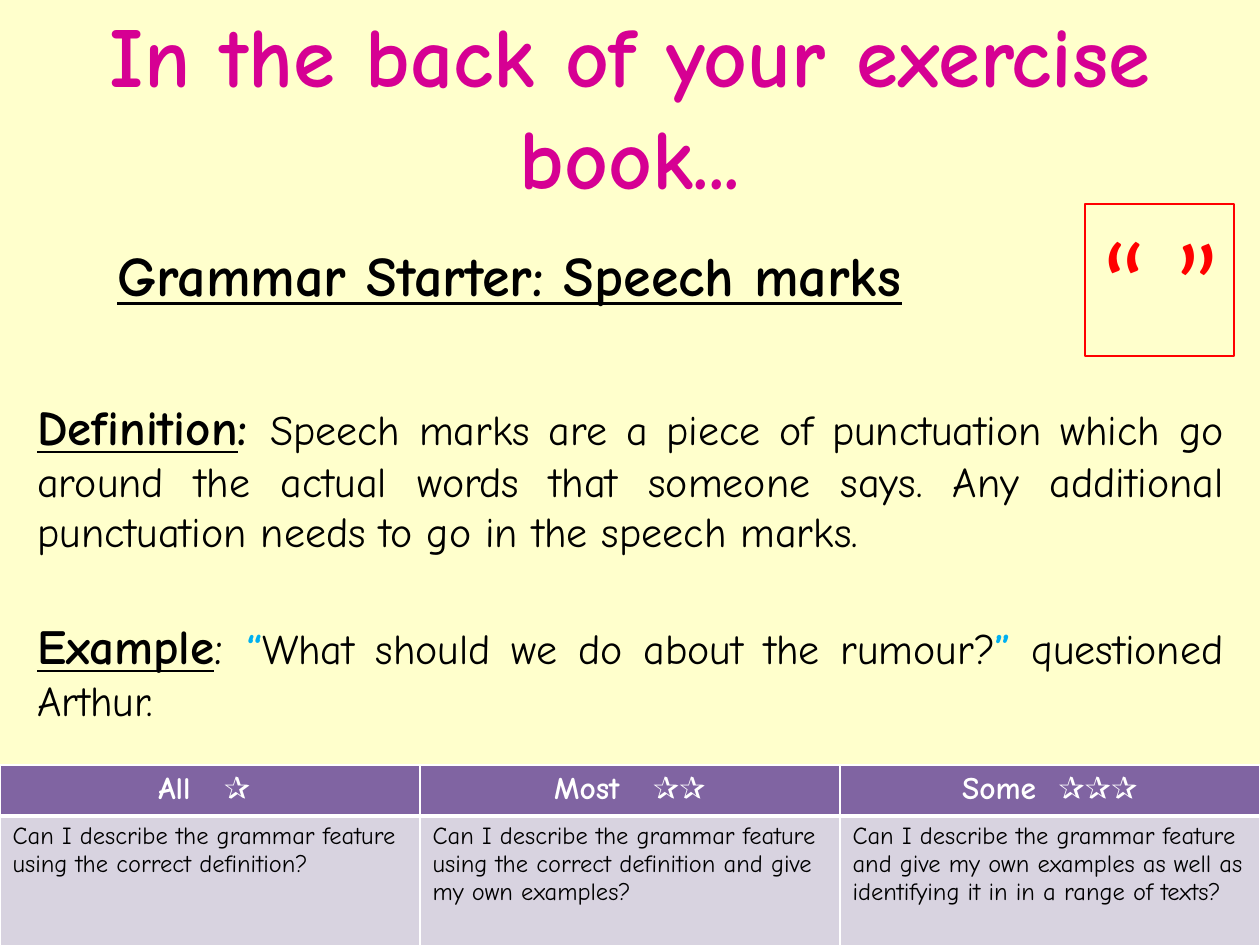
from lxml.etree import SubElement
from pptx import Presentation
from pptx.dml.color import RGBColor
from pptx.enum.shapes import MSO_SHAPE
from pptx.enum.text import MSO_ANCHOR, PP_ALIGN
from pptx.oxml.ns import qn
from pptx.util import Pt

EMU_PER_PX = 914400 / 126
FONT = "Comic Neue"
COLORS = {
    "paper": "FFFFCC", "title": "D60093", "ink": "000000", "quote": "00B0F0",
    "mark": "FF0000", "header": "8064A2", "cell": "D8D3E0", "white": "FFFFFF",
}


def px(n):
    return round(n * EMU_PER_PX)


def rgb(name):
    return RGBColor.from_string(COLORS[name])


class SlideBuilder:
    def __init__(self, prs):
        self.s = prs.slides.add_slide(prs.slide_layouts[6])
        fill = self.s.background.fill
        fill.solid()
        fill.fore_color.rgb = rgb("paper")

    def style(self, font, size, color="ink", bold=False, underline=None, name=FONT):
        font.name, font.size, font.bold = name, Pt(size), bold
        font.underline = underline
        font.color.rgb = rgb(color)

    def text_box(self, x, y, w, h, anchor=MSO_ANCHOR.TOP):
        tf = self.s.shapes.add_textbox(px(x), px(y), px(w), px(h)).text_frame
        tf.word_wrap = True
        tf.vertical_anchor = anchor
        return tf

    def paragraph(self, p, text, align=PP_ALIGN.LEFT, before=0, indent=0, **style):
        p.text = text
        p.alignment = align
        p.space_before = Pt(before)
        if indent:
            p._p.get_or_add_pPr().set("marL", str(px(indent)))
        self.style(p.font, **style)

    def rich_paragraph(self, p, runs, before):
        """Fill a justified paragraph from (text, style) pairs."""
        p.alignment = PP_ALIGN.JUSTIFY
        p.space_before = Pt(before)
        for text, style in runs:
            r = p.add_run()
            r.text = text
            self.style(r.font, **style)

    def framed_text(self, x, y, w, h, text, color, size, name):
        sp = self.s.shapes.add_shape(MSO_SHAPE.RECTANGLE, px(x), px(y), px(w), px(h))
        sp.shadow.inherit = False
        sp.fill.background()
        sp.line.color.rgb = rgb(color)
        sp.line.width = Pt(1)
        tf = sp.text_frame
        tf.word_wrap = True
        tf.margin_left = tf.margin_right = 0
        tf.vertical_anchor = MSO_ANCHOR.TOP
        self.paragraph(tf.paragraphs[0], text, PP_ALIGN.CENTER,
                       size=size, color=color, name=name)

    def border(self, cell, **widths):
        """Draw white cell borders, widths in points by side (L, R, T, B)."""
        tc_pr = cell._tc.get_or_add_tcPr()
        for side, width in widths.items():
            ln = SubElement(tc_pr, qn(f"a:ln{side}"), w=str(Pt(width)))
            fill = SubElement(ln, qn("a:solidFill"))
            SubElement(fill, qn("a:srgbClr"), val=COLORS["white"])

    def fill_cell(self, cell, color, top, bottom):
        self.border(cell, L=1, R=1, T=top, B=bottom)
        cell.fill.solid()
        cell.fill.fore_color.rgb = rgb(color)

    def level_header(self, p, level, stars, gap):
        """Write a level name and its stars, with the space between widened by gap points."""
        p.alignment = PP_ALIGN.CENTER
        for text in (level, " ", stars):
            r = p.add_run()
            r.text = text
            self.style(r.font, 18, "white", bold=True)
            if text == " ":
                r.font._element.set("spc", str(round(gap * 100)))

    def levels_table(self, x, y, w, row_heights, levels):
        table = self.s.shapes.add_table(2, len(levels), px(x), px(y), px(w),
                                        px(sum(row_heights))).table
        table.horz_banding = False
        for row, height in zip(table.rows, row_heights):
            row.height = px(height)
        for i, (level, stars, gap, question) in enumerate(levels):
            table.columns[i].width = px(w // len(levels))
            head, body = table.cell(0, i), table.cell(1, i)
            self.fill_cell(head, "header", top=1, bottom=3)
            self.fill_cell(body, "cell", top=3, bottom=1)
            self.level_header(head.text_frame.paragraphs[0], level, stars, gap)
            self.paragraph(body.text_frame.paragraphs[0], question, size=14)


def main():
    prs = Presentation()
    prs.slide_width, prs.slide_height = px(1260), px(945)
    slide = SlideBuilder(prs)

    title = slide.text_box(0, 3, 1260, 203, MSO_ANCHOR.MIDDLE)
    slide.paragraph(title.paragraphs[0], "In the back of your exercise book...",
                    PP_ALIGN.CENTER, size=48.6, color="title", bold=True)

    label = dict(size=28, bold=True, underline=True)
    plain = dict(size=24)
    quote = dict(size=24, color="quote", bold=True)
    body = slide.text_box(25, 234, 1211, 610)
    slide.paragraph(body.paragraphs[0], "Grammar Starter: Speech marks",
                    indent=80, size=32, bold=True, underline=True)
    slide.rich_paragraph(body.add_paragraph(), [
        ("Definition", label),
        (": ", dict(size=28, bold=True)),
        ("Speech marks are a piece of punctuation which go around the actual words "
         "that someone says. Any additional punctuation needs to go in the speech "
         "marks.", plain),
    ], before=51)
    slide.rich_paragraph(body.add_paragraph(), [
        ("Example", label),
        (": ", dict(size=28)),
        ("“", quote),
        ("What should we do about the rumour?", plain),
        ("”", quote),
        (" questioned Arthur.", plain),
    ], before=34)

    slide.levels_table(0, 765, 1260, (51, 130), [
        ("All", "✰ ", 12.6, "Can I describe the grammar feature using the correct definition?"),
        ("Most", "✰✰", 12.6, "Can I describe the grammar feature using the correct "
                             "definition and give my own examples?"),
        ("Some", "✰✰✰", 6.3, "Can I describe the grammar feature and give my own examples "
                             "as well as identifying it in in a range of texts?"),
    ])
    slide.framed_text(1085, 204, 149, 152, "“ ”", "mark", 66, "Calibri")
    prs.save("out.pptx")


if __name__ == "__main__":
    main()
